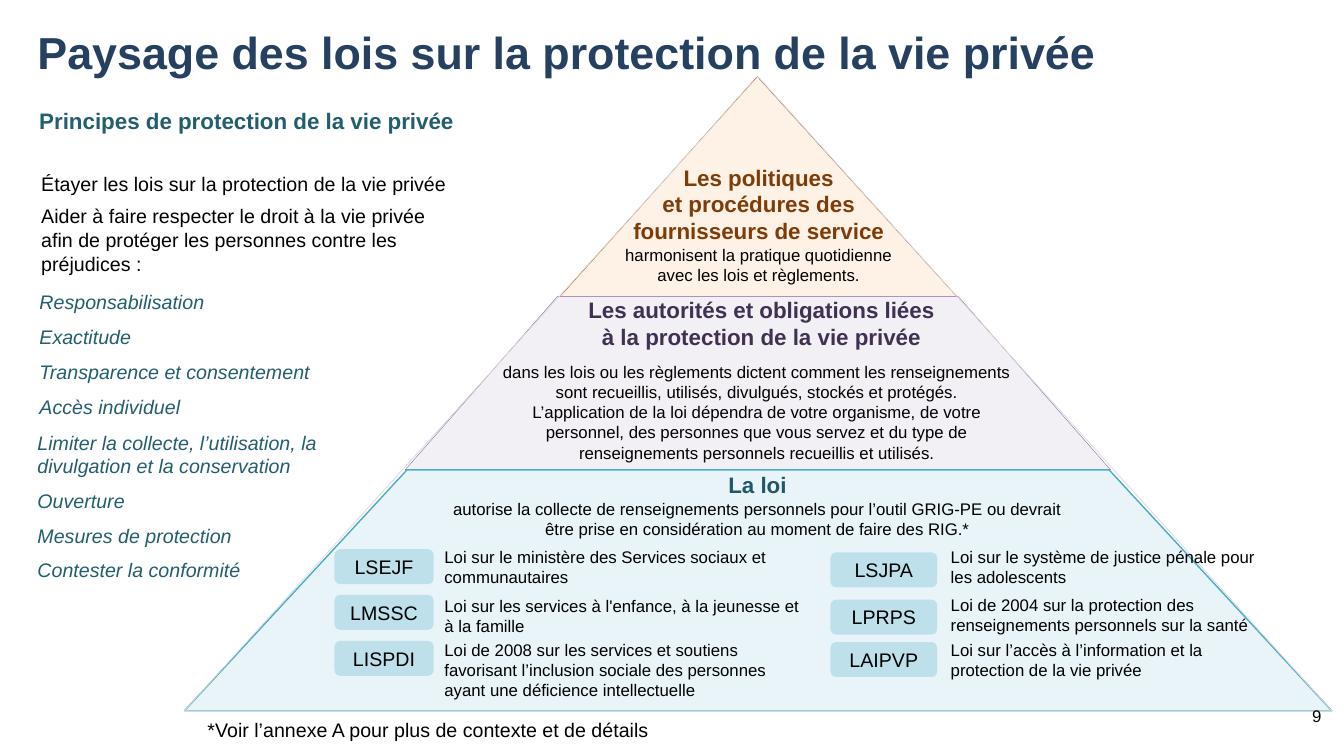
from lxml.etree import SubElement
from pptx import Presentation
from pptx.dml.color import RGBColor
from pptx.enum.shapes import MSO_SHAPE as Shape
from pptx.enum.text import MSO_ANCHOR as Anchor, MSO_AUTO_SIZE as AutoSize, PP_ALIGN as Align
from pptx.oxml.ns import qn
from pptx.util import Cm, Pt

FONT = "Arial"
COLORS = {
    "title": "254061", "teal": "225E6D", "black": "000000",
    "policy_fill": "FEF1E6", "policy_line": "984807", "policy_text": "7F3C06",
    "duty_fill": "F2EFF5", "duty_line": "8064A2", "duty_text": "403152",
    "law_fill": "E8F4F8", "law_line": "4BACC6", "law_text": "215869",
    "badge": "93CDDD", "outline": "D9D9D9",
}

PRINCIPLES_TOP = ["Responsabilisation", "Exactitude", "Transparence et consentement",
                  "Accès individuel"]
PRINCIPLES_BOTTOM = ["Limiter la collecte, l’utilisation, la divulgation et la conservation",
                     "Ouverture", "Mesures de protection", "Contester la conformité"]

# Name, law, badge top and text top (cm below the top of the pyramid)
LAWS_LEFT = [
    ("LSEJF", "Loi sur le ministère des Services sociaux et communautaires", 11.91, 11.71),
    ("LMSSC", "Loi sur les services à l'enfance, à la jeunesse et à la famille", 13.06, 12.95),
    ("LISPDI", "Loi de 2008 sur les services et soutiens favorisant l’inclusion sociale "
               "des personnes ayant une déficience intellectuelle", 14.22, 14.07),
]
LAWS_RIGHT = [
    ("LSJPA", "Loi sur le système de justice pénale pour les adolescents", 11.99, 11.71),
    ("LPRPS", "Loi de 2004 sur la protection des renseignements personnels sur la santé",
     13.18, 12.93),
    ("LAIPVP", "Loi sur l’accès à l’information et la protection de la vie privée",
     14.25, 14.07),
]


def color(name):
    return RGBColor.from_string(COLORS[name])


def place(shape, left, top, width, height):
    shape.left, shape.top, shape.width, shape.height = map(Cm, (left, top, width, height))


def write_text(shape, lines, size=12, ink="black", bold=False, italic=False,
               align=Align.LEFT, anchor=Anchor.TOP, after=0, spacing=1.0):
    """Append one paragraph per line to the shape."""
    frame = shape.text_frame
    frame.word_wrap = True
    frame.auto_size = AutoSize.NONE
    frame.vertical_anchor = anchor
    for line in lines:
        paragraph = frame.add_paragraph() if frame.text else frame.paragraphs[0]
        if shape.is_placeholder:
            properties = paragraph._p.get_or_add_pPr()
            properties.set("marL", "0")
            properties.set("indent", "0")
            SubElement(properties, qn("a:buNone"))
        paragraph.alignment = align
        paragraph.line_spacing = spacing
        paragraph.space_before = Pt(0)
        paragraph.space_after = Pt(after)
        run = paragraph.add_run()
        run.text = line
        font = run.font
        font.name, font.size, font.bold, font.italic = FONT, Pt(size), bold, italic
        font.color.rgb = color(ink)


def add_text(slide, box, lines, **text_format):
    shape = slide.shapes.add_textbox(*map(Cm, box))
    write_text(shape, lines, **text_format)
    return shape


def add_shape(slide, kind, box, fill=None, line=None, weight=0.25, adjust=None, alpha=None):
    shape = slide.shapes.add_shape(kind, *map(Cm, box))
    shape.shadow.inherit = False
    if adjust is not None:
        shape.adjustments[0] = adjust
    if fill:
        shape.fill.solid()
        shape.fill.fore_color.rgb = color(fill)
    else:
        shape.fill.background()
    if alpha:
        tint = shape._element.spPr.find(qn("a:solidFill")).find(qn("a:srgbClr"))
        SubElement(tint, qn("a:alpha")).set("val", str(alpha * 1000))
    if line:
        shape.line.color.rgb = color(line)
        shape.line.width = Pt(weight)
    else:
        shape.line.fill.background()
    return shape


def add_principles(slide, left, top):
    """Left column: heading, aims and the two lists of principles."""
    add_text(slide, (left, top, 11.3, 0.94), ["Principes de protection de la vie privée"],
             size=16, ink="teal", bold=True)
    add_text(slide, (left + 0.05, top + 1.65, 10.9, 2.87), [
        "Étayer les lois sur la protection de la vie privée",
        "Aider à faire respecter le droit à la vie privée afin de protéger les personnes "
        "contre les préjudices :"], size=14, after=6)
    lists = [(1, PRINCIPLES_TOP, (left, top + 4.62, 7.8, 3.51)),
             (2, PRINCIPLES_BOTTOM, (left - 0.05, top + 8.15, 8.28, 4.09))]
    for index, principles, box in lists:
        body = slide.placeholders[index]
        place(body, *box)
        write_text(body, principles, size=14, ink="teal", italic=True, after=8)


def add_laws(slide, left, top, badge_width, text_left, text_width, laws):
    """One column of badges, each with the law it stands for."""
    for name, law, badge_top, text_top in laws:
        badge = add_shape(slide, Shape.ROUNDED_RECTANGLE,
                          (left, top + badge_top, badge_width, 0.88), "badge", alpha=50)
        write_text(badge, [name], size=14, align=Align.CENTER, anchor=Anchor.MIDDLE)
        add_text(slide, (text_left, top + text_top, text_width, 1.27), [law])


def add_pyramid(slide, left, top, width, height):
    # Three levels and the thin outline around them
    add_shape(slide, Shape.ISOSCELES_TRIANGLE, (left + 9.45, top, 10.03, 5.56),
              "policy_fill", "policy_line", adjust=0.497)
    add_shape(slide, Shape.TRAPEZOID, (left + 5.56, top + 5.54, 17.78, 4.37),
              "duty_fill", "duty_line", adjust=0.879)
    add_shape(slide, Shape.TRAPEZOID, (left, top + 9.91, width, height - 9.91),
              "law_fill", "law_line", weight=1, adjust=0.924)
    add_shape(slide, Shape.ISOSCELES_TRIANGLE, (left, top, width, height),
              line="outline", weight=0.5)

    # Top level
    policies = add_text(slide, (left + 10.7, top + 1.42, 7.54, 4.6),
                        ["Les politiques", "et procédures des", "fournisseurs de service"],
                        size=16, ink="policy_text", bold=True,
                        align=Align.CENTER, anchor=Anchor.MIDDLE)
    write_text(policies, ["harmonisent la pratique quotidienne", "avec les lois et règlements."],
               align=Align.CENTER, anchor=Anchor.MIDDLE)

    # Middle level
    add_text(slide, (left + 9.88, top + 5.41, 9.32, 1.63),
             ["Les autorités et obligations liées à la protection de la vie privée"],
             size=16, ink="duty_text", bold=True, align=Align.CENTER)
    add_text(slide, (left + 7.72, top + 7.06, 13.41, 2.82), [
        "dans les lois ou les règlements dictent comment les renseignements sont recueillis, "
        "utilisés, divulgués, stockés et protégés.",
        "L’application de la loi dépendra de votre organisme, de votre personnel, des personnes "
        "que vous servez et du type de renseignements personnels recueillis et utilisés."],
        align=Align.CENTER)

    # Bottom level
    law = add_text(slide, (left + 6.35, top + 9.83, 16.18, 1.96), ["La loi"],
                   size=16, ink="law_text", bold=True, align=Align.CENTER)
    write_text(law, ["autorise la collecte de renseignements personnels pour l’outil GRIG-PE ou "
                     "devrait être prise en considération au moment de faire des RIG.*"],
               align=Align.CENTER)
    add_laws(slide, left + 3.78, top, 2.5, left + 6.3, 9.7, LAWS_LEFT)
    add_laws(slide, left + 16.28, top, 2.69, left + 19.06, 8.4, LAWS_RIGHT)


def add_footer(slide, left, top):
    add_text(slide, (left, top, 20.14, 0.86),
             ["*Voir l’annexe A pour plus de contexte et de détails"], size=14)
    add_text(slide, (left + 20.95, top - 0.43, 7.62, 1.02), ["9"],
             align=Align.RIGHT, anchor=Anchor.MIDDLE)


def main():
    presentation = Presentation()
    presentation.slide_width, presentation.slide_height = Cm(33.87), Cm(19.05)
    slide = presentation.slides.add_slide(presentation.slide_layouts[3])

    title = slide.shapes.title
    place(title, 0.69, 0.25, 29.21, 2.29)
    write_text(title, ["Paysage des lois sur la protection de la vie privée"], size=32,
               ink="title", bold=True, anchor=Anchor.MIDDLE, spacing=0.9)
    add_principles(slide, 0.74, 2.57)
    add_pyramid(slide, 4.65, 1.93, 28.91, 15.98)
    add_footer(slide, 4.98, 17.96)
    presentation.save("out.pptx")


if __name__ == "__main__":
    main()
